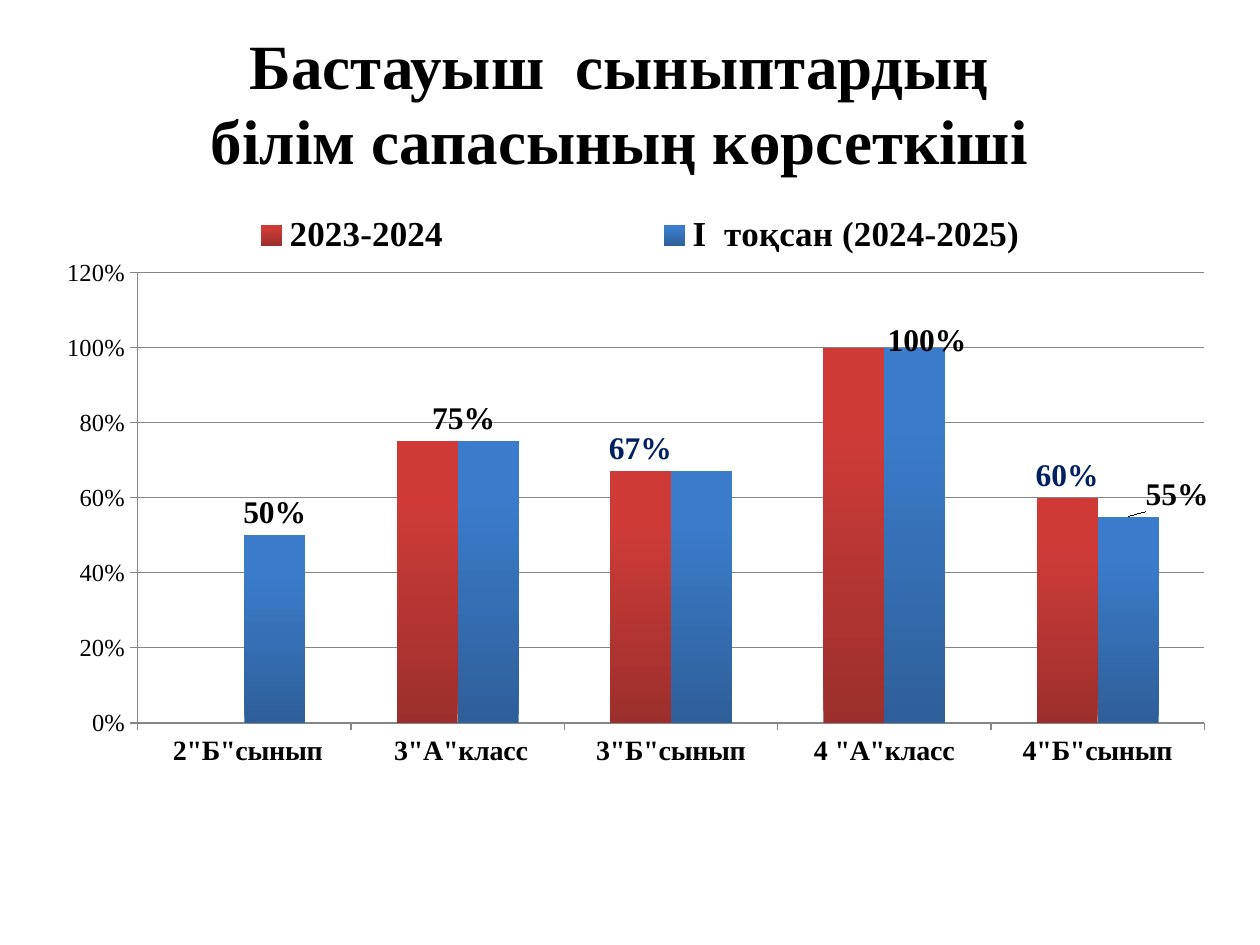
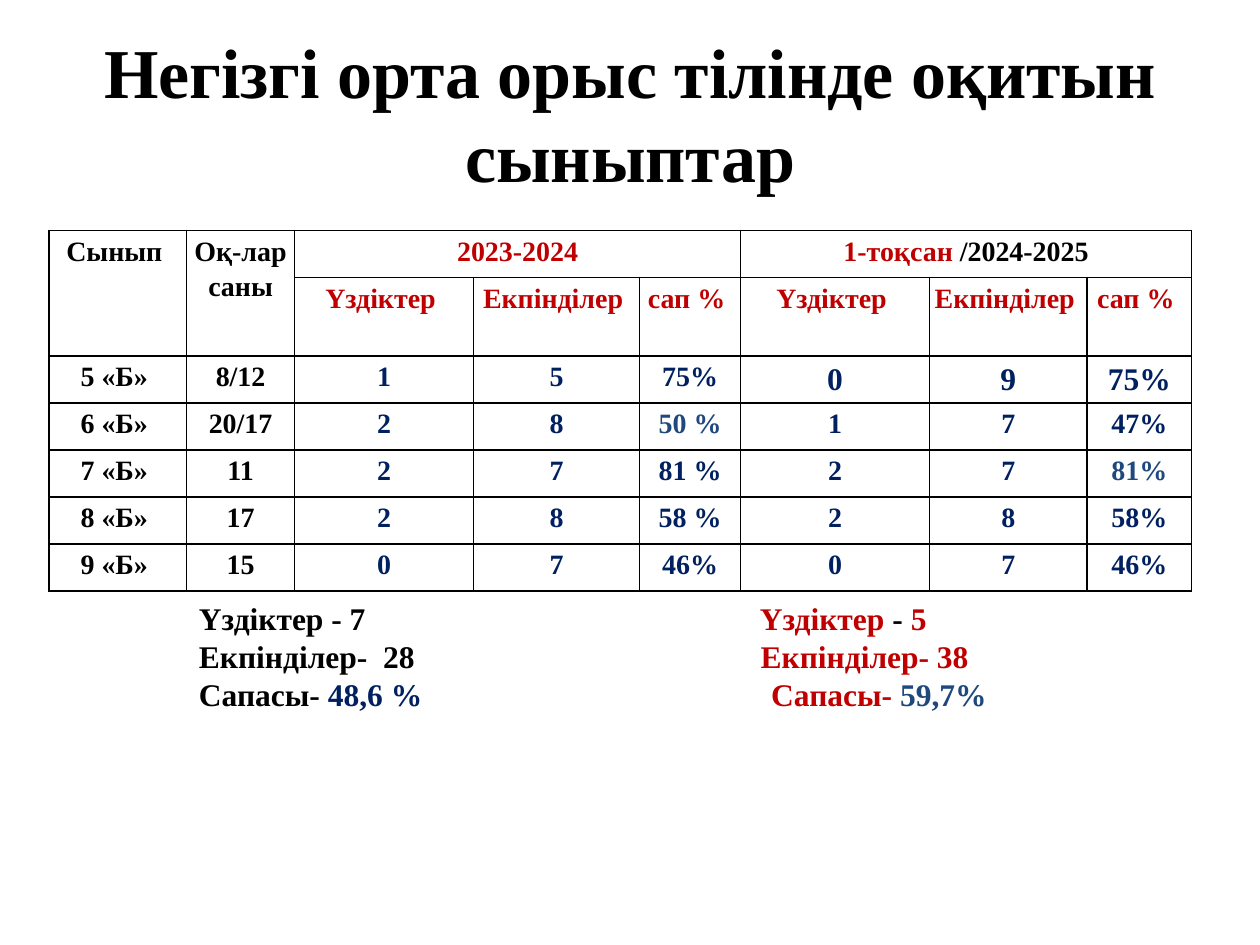
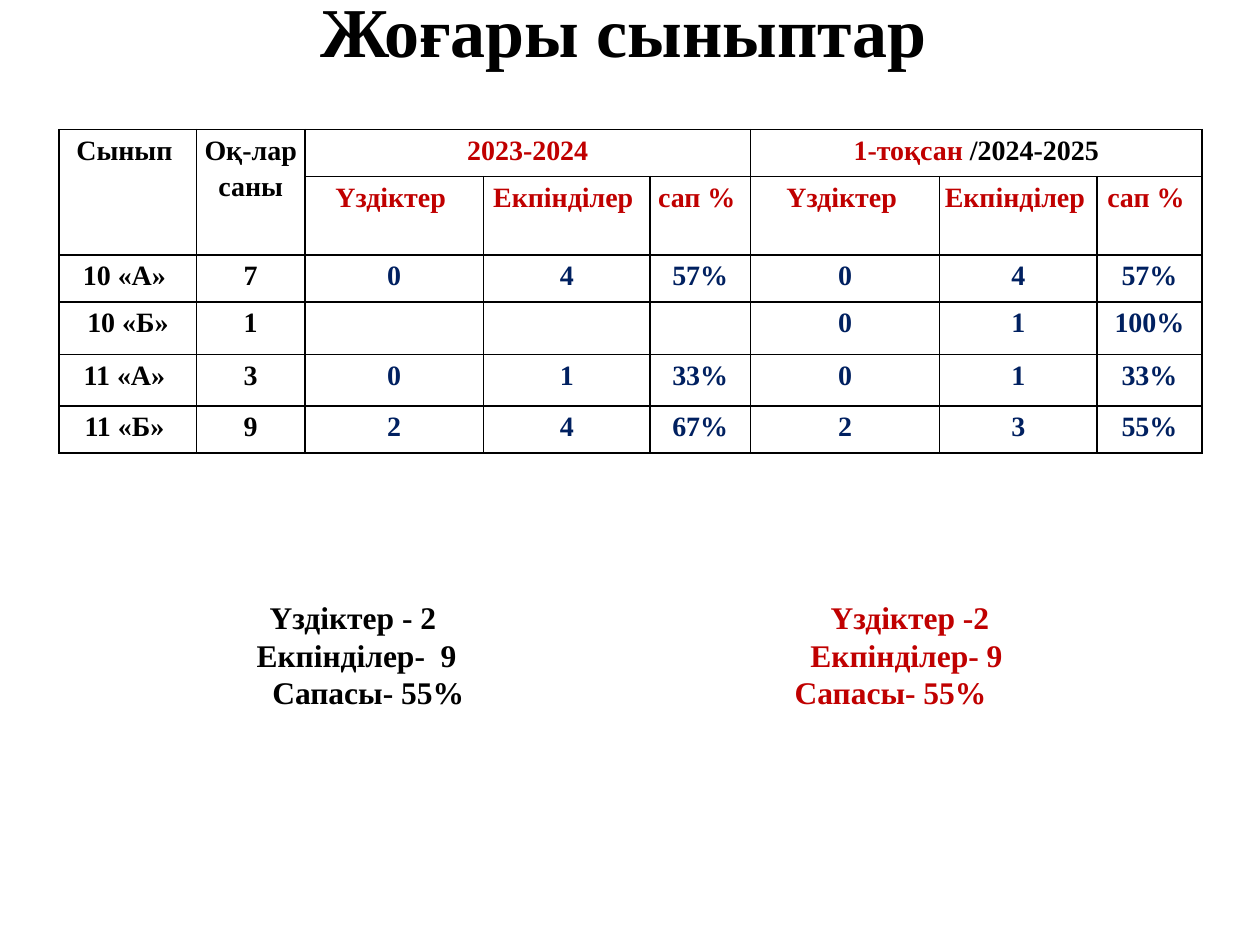
from copy import deepcopy

from pptx import Presentation
from pptx.chart.data import CategoryChartData
from pptx.dml.color import RGBColor
from pptx.enum.chart import XL_CHART_TYPE, XL_LABEL_POSITION, XL_LEGEND_POSITION, XL_TICK_MARK
from pptx.enum.text import PP_ALIGN
from pptx.oxml import parse_xml
from pptx.oxml.ns import nsdecls
from pptx.util import Pt

BLACK = RGBColor(0x00, 0x00, 0x00)
GRAY = RGBColor(0x86, 0x86, 0x86)
RED = RGBColor(0xC0, 0x00, 0x00)
NAVY = RGBColor(0x00, 0x20, 0x60)
BLUE = RGBColor(0x1F, 0x49, 0x7D)
BAR_RED = (RGBColor(0x9C, 0x2F, 0x2D), RGBColor(0xCE, 0x3B, 0x37))
BAR_BLUE = (RGBColor(0x2F, 0x5F, 0x99), RGBColor(0x3A, 0x7C, 0xCB))
FONT = "Times New Roman"


def write(p, runs, size, align=PP_ALIGN.CENTER):
    """Fill a paragraph with bold runs given as (text, colour) pairs."""
    p.alignment = align
    for text, color in runs:
        r = p.add_run()
        r.text = text
        r.font.name, r.font.size, r.font.bold = FONT, Pt(size), True
        r.font.color.rgb = color


def add_title(s, box, lines, size):
    tf = s.shapes.add_textbox(*[Pt(v) for v in box]).text_frame
    tf.word_wrap = True
    for i, line in enumerate(lines):
        p = tf.add_paragraph() if i else tf.paragraphs[0]
        write(p, [(line, BLACK)], size)


prs = Presentation()
prs.slide_width, prs.slide_height = Pt(720), Pt(540)
blank = prs.slide_layouts[6]

# Slide 1: quality chart of the primary classes
s = prs.slides.add_slide(blank)
add_title(s, (28, 11.5, 652, 138),
          ["Бастауыш  сыныптардың", "білім сапасының көрсеткіші"], 36)

data = CategoryChartData(number_format="0%")
data.categories = [' 2"Б"сынып', ' 3"А"класс', '3"Б"сынып', '4 "А"класс', '4"Б"сынып']
data.add_series("2023-2024", [None, 0.75, 0.67, 1, 0.6])
data.add_series("I  тоқсан (2024-2025)", [0.5, 0.75, 0.67, 1, 0.55])
chart = s.shapes.add_chart(XL_CHART_TYPE.COLUMN_CLUSTERED, Pt(8.6), Pt(100),
                           Pt(700.6), Pt(429), data).chart
chart.has_title = False
chart.font.size, chart.font.name, chart.font.color.rgb = Pt(18), "Calibri", BLACK
plot = chart.plots[0]
plot.gap_width, plot.overlap, plot.vary_by_categories = 150, 0, False

# Axes
values, classes = chart.value_axis, chart.category_axis
values.minimum_scale, values.maximum_scale, values.major_unit = 0, 1.2, 0.2
values.tick_labels.number_format = "0%"
values.tick_labels.number_format_is_linked = False
values.major_gridlines.format.line.color.rgb = GRAY
for axis, size in ((values, 14), (classes, 16)):
    axis.major_tick_mark = XL_TICK_MARK.OUTSIDE
    axis.format.line.color.rgb = GRAY
    font = axis.tick_labels.font
    font.size, font.name, font.bold = Pt(size), FONT, axis is classes

# Legend and the places of legend and plot area
chart.has_legend = True
legend = chart.legend
legend.position, legend.include_in_layout = XL_LEGEND_POSITION.RIGHT, False
legend.font.size, legend.font.name, legend.font.bold = Pt(20), FONT, True
legend_layout, plot_layout = [
    parse_xml(f'<c:layout {nsdecls("c")}><c:manualLayout>{target}'
              '<c:xMode val="edge"/><c:yMode val="edge"/>'
              f'<c:x val="{x}"/><c:y val="{y}"/><c:w val="{w}"/><c:h val="{h}"/>'
              '</c:manualLayout></c:layout>')
    for target, x, y, w, h in (("", 0.03, 0.04, 0.96, 0.08),
                               ('<c:layoutTarget val="inner"/>', 0.1, 0.13, 0.87, 0.6))]
for parent, layout in ((legend._element, legend_layout),
                       (chart._chartSpace.chart.plotArea, plot_layout)):
    for old in parent.findall(layout.tag):
        parent.remove(old)
    parent.insert(1 if parent is legend._element else 0, layout)

# Bars and labels: None hides a label, a pair shifts it
label_changes = [
    (BAR_RED, NAVY, {1: None, 3: None}),
    (BAR_BLUE, BLACK, {1: (-0.02, 0), 2: None, 3: (0.01, 0.02), 4: (0.04, 0)}),
]
for series, (shades, color, changes) in zip(plot.series, label_changes):
    fill = series.format.fill
    fill.gradient()
    fill.gradient_angle = 90
    for stop, shade, position in zip(fill.gradient_stops, shades, (0, 0.8)):
        stop.color.rgb, stop.position = shade, position
    labels = series.data_labels
    labels.show_value, labels.position = True, XL_LABEL_POSITION.OUTSIDE_END
    labels.number_format, labels.number_format_is_linked = "0%", False
    labels.font.size, labels.font.name, labels.font.bold = Pt(18), FONT, True
    labels.font.color.rgb = color
    shared = [e for e in labels._element if not e.tag.endswith("showLeaderLines")]
    for n, (idx, shift) in enumerate(changes.items()):
        if shift is None:
            detail = '<c:delete val="1"/>'
        else:
            detail = (f'<c:layout><c:manualLayout><c:x val="{shift[0]}"/>'
                      f'<c:y val="{shift[1]}"/></c:manualLayout></c:layout>')
        label = parse_xml(f'<c:dLbl {nsdecls("c")}><c:idx val="{idx}"/>{detail}</c:dLbl>')
        if shift is not None:
            label.extend([deepcopy(e) for e in shared])
        labels._element.insert(n, label)

# Slides 2 and 3: a grade table with totals below
COLUMNS = [78.6, 61.8, 102.2, 95, 57.6, 108, 90, 59.8]
SUBHEADS = ["Үздіктер ", "Екпінділер ", "сап % "] * 2
grade_slides = [
    dict(
        title=((39.6, 13, 641, 104), ["Негізгі орта орыс тілінде оқитын сыныптар"]),
        table_at=(28, 131.6),
        heights=[26.9, 31.7] + [26.9] * 5,
        rows=[
            ["5 «Б» ", "8/12", "1", "5", "75%", "0", "9", "75%"],
            ["6 «Б» ", "20/17", "2", "8", "50 %", "1", "7", "47%"],
            ["7 «Б» ", "11", "2", "7", "81 %", "2", "7", "81%"],
            ["8 «Б» ", "17", "2", "8", "58 %", "2", "8", "58%"],
            ["9 «Б» ", "15", "0", "7", "46%", "0", "7", "46%"],
        ],
        blue={(1, 4), (2, 7)},
        large={(0, 5), (0, 6), (0, 7)},
        totals_box=(106.6, 339, 495, 73),
        totals=[
            ([320.5], [("Үздіктер - 7", BLACK), ("\tҮздіктер", RED), (" - ", BLACK), ("5", RED)]),
            ([321], [("Екпінділер-  28", BLACK), ("\tЕкпінділер- 38", RED)]),
            ([327], [("Сапасы- ", BLACK), ("48,6 %", NAVY), ("\tСапасы- ", RED), ("59,7%", BLUE)]),
        ],
    ),
    dict(
        title=((174, -10.8, 364.5, 55.5), ["Жоғары сыныптар"]),
        table_at=(33.8, 74),
        heights=[26.9, 31.7, 26.9, 30, 29.5, 26.9],
        rows=[
            ["10 «А» ", "7", "0", "4", "57%", "0", "4", "57%"],
            ["10 «Б»", "1", "", "", "", "0", "1", "100%"],
            ["11 «А» ", "3", "0", "1", "33%", "0", "1", "33%"],
            ["11 «Б» ", "9", "2", "4", "67%", "2", "3", "55%"],
        ],
        blue=set(),
        large=set(),
        totals_box=(56, 338, 608, 73),
        totals=[
            ([91, 411.5], [("\tҮздіктер - 2", BLACK), ("\tҮздіктер -2", RED)]),
            ([83.5, 400], [("\tЕкпінділер-  9", BLACK), ("\tЕкпінділер- 9", RED)]),
            ([92.5, 391], [("\tСапасы- 55%", BLACK), ("\tСапасы- 55%", RED)]),
        ],
    ),
]

for g in grade_slides:
    s = prs.slides.add_slide(blank)
    add_title(s, *g["title"], 40)

    # Table grid
    left, top = g["table_at"]
    table = s.shapes.add_table(len(g["heights"]), len(COLUMNS), Pt(left), Pt(top),
                               Pt(sum(COLUMNS)), Pt(sum(g["heights"]))).table
    for column, width in zip(table.columns, COLUMNS):
        column.width = Pt(width)
    for row, height in zip(table.rows, g["heights"]):
        row.height = Pt(height)
    for cell in table.iter_cells():
        cell.margin_left = cell.margin_right = Pt(2)
        cell.margin_top, cell.margin_bottom = Pt(0.7), Pt(0)
        cell.fill.background()
        for n, side in enumerate(("lnL", "lnR", "lnT", "lnB")):
            cell._tc.get_or_add_tcPr().insert(n, parse_xml(
                f'<a:{side} {nsdecls("a")} w="{Pt(1)}"><a:solidFill>'
                f'<a:srgbClr val="{BLACK}"/></a:solidFill></a:{side}>'))
    for first, last in (((0, 0), (1, 0)), ((0, 1), (1, 1)), ((0, 2), (0, 4)), ((0, 5), (0, 7))):
        table.cell(*first).merge(table.cell(*last))

    # Table text
    entries = {
        (0, 0): ([("Сынып ", BLACK)], 16),
        (0, 1): ([("Оқ-лар саны", BLACK)], 16),
        (0, 2): ([("2023-2024", RED)], 16),
        (0, 5): ([("1-тоқсан", RED), (" /2024-2025", BLACK)], 16),
    }
    for j, text in enumerate(SUBHEADS, 2):
        entries[1, j] = [(text, RED)], 16
    for i, row in enumerate(g["rows"]):
        for j, text in enumerate(row):
            color = BLACK if j < 2 else BLUE if (i, j) in g["blue"] else NAVY
            if text:
                entries[i + 2, j] = [(text, color)], 18 if (i, j) in g["large"] else 16
    for place, (runs, size) in entries.items():
        p = table.cell(*place).text_frame.paragraphs[0]
        p.line_spacing = 1.15
        write(p, runs, size)

    # Totals in two columns set by tab stops
    tf = s.shapes.add_textbox(*[Pt(v) for v in g["totals_box"]]).text_frame
    tf.word_wrap = True
    for i, (stops, runs) in enumerate(g["totals"]):
        p = tf.add_paragraph() if i else tf.paragraphs[0]
        write(p, runs, 18, PP_ALIGN.LEFT)
        tabs = "".join(f'<a:tab pos="{Pt(x)}" algn="l"/>' for x in stops)
        p._p.get_or_add_pPr().append(
            parse_xml(f'<a:tabLst {nsdecls("a")}>{tabs}</a:tabLst>'))

prs.save("out.pptx")
